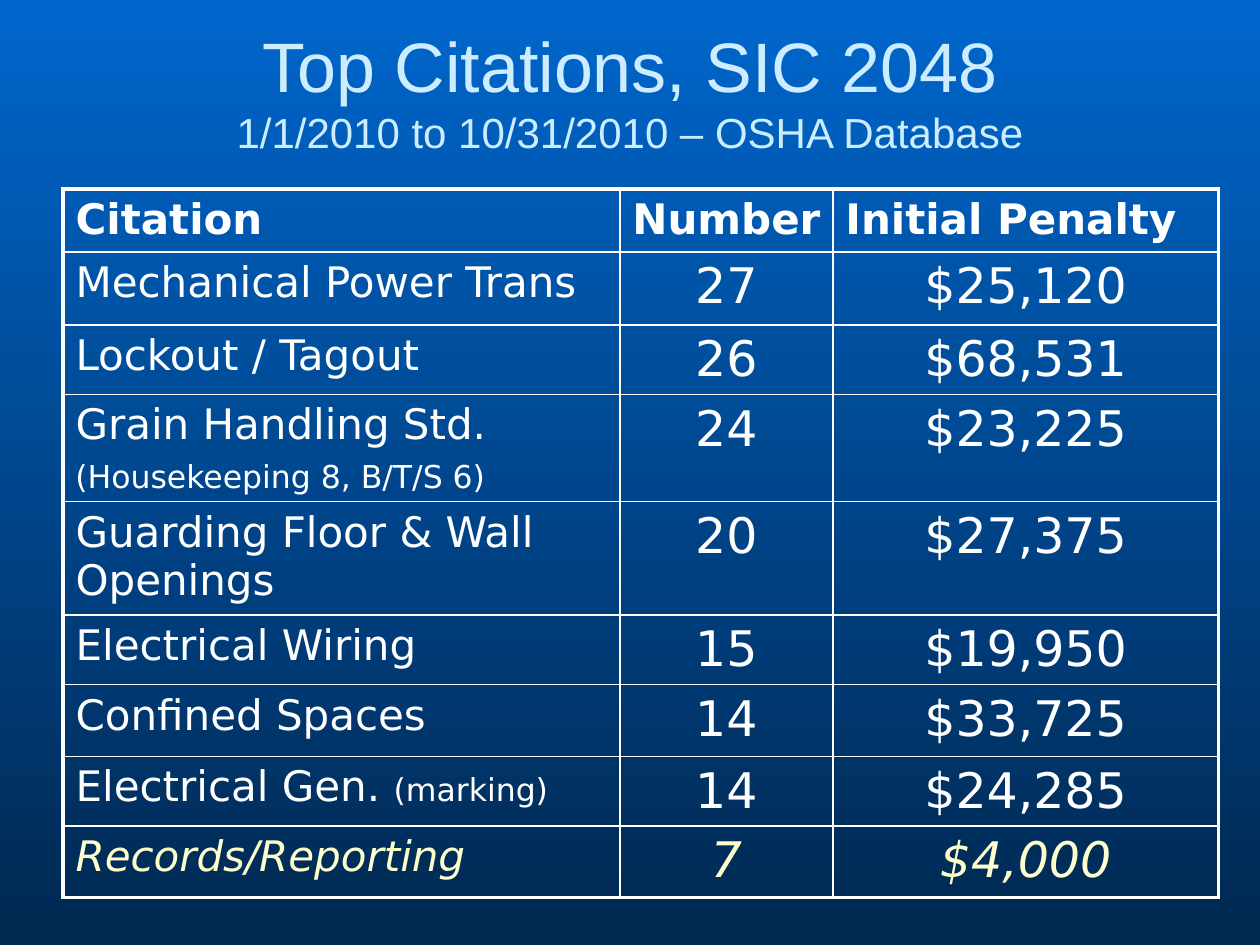
from lxml.etree import SubElement
from pptx import Presentation
from pptx.dml.color import RGBColor
from pptx.enum.text import MSO_ANCHOR, MSO_AUTO_SIZE, PP_ALIGN
from pptx.oxml.ns import qn
from pptx.util import Inches, Pt

WHITE = RGBColor(0xFF, 0xFF, 0xFF)
CREAM = RGBColor(0xFF, 0xFF, 0xCC)
ICE = RGBColor(0xCC, 0xEC, 0xFF)
SKY = RGBColor(0x00, 0x66, 0xCC)
NAVY = RGBColor(0x00, 0x28, 0x50)
SANS = "DejaVu Sans"

TITLE = [("Top Citations, SIC 2048", 40), ("1/1/2010 to 10/31/2010 – OSHA Database", 24)]
HEAD = ("Citation", "Number", "Initial Penalty")
ROWS = [
    ("Mechanical Power Trans", "27", "$25,120"),
    ("Lockout / Tagout", "26", "$68,531"),
    ("Grain Handling Std.", "24", "$23,225"),
    ("Guarding Floor & Wall Openings", "20", "$27,375"),
    ("Electrical Wiring", "15", "$19,950"),
    ("Confined Spaces", "14", "$33,725"),
    ("Electrical Gen. ", "14", "$24,285"),
    ("Records/Reporting", "7", "$4,000"),
]
ASIDE = {"Electrical Gen. ": "(marking)"}
DETAIL = "(Housekeeping 8, B/T/S 6)"
COLS = (4.42, 1.69, 3.06)
HIGH = (0.5, 0.58, 0.55, 0.85, 0.9, 0.55, 0.57, 0.55, 0.57)


def put(item, values):
    for key, value in values.items():
        setattr(item, key, value)


def write(para, text, size, color=WHITE, name=SANS, **style):
    run = para.add_run()
    run.text = text
    put(run.font, dict(size=Pt(size), name=name, **style))
    run.font.color.rgb = color


def place(shape, left, top, width, height):
    put(shape, dict(left=Inches(left), top=Inches(top),
                    width=Inches(width), height=Inches(height)))


def border(cell, outer):
    props = cell._tc.get_or_add_tcPr()
    for side in "LRTB":
        width = Pt(2.25 if side in outer else 1)
        line = SubElement(props, qn("a:ln" + side), w=str(width))
        fill = SubElement(line, qn("a:solidFill"))
        SubElement(fill, qn("a:srgbClr"), val=str(WHITE))
    cell.fill.background()


def add_title(slide):
    title = slide.shapes.title
    place(title, 0.5, 0, 9, 1.42)
    put(title.text_frame, dict(vertical_anchor=MSO_ANCHOR.MIDDLE,
                               auto_size=MSO_AUTO_SIZE.NONE, word_wrap=True))
    para = title.text_frame.paragraphs[0]
    para.alignment = PP_ALIGN.CENTER
    for i, (text, size) in enumerate(TITLE):
        if i:
            para.add_line_break()
        write(para, text, size, ICE, "Arial")


def add_grid(slide):
    data = [HEAD] + ROWS
    last = len(data) - 1
    grid = slide.shapes.add_table(
        len(data), len(COLS), Inches(0.5), Inches(1.5),
        Inches(sum(COLS)), Inches(sum(HIGH))).table
    put(grid, dict(first_row=False, horz_banding=False))
    for col, width in zip(grid.columns, COLS):
        col.width = Inches(width)
    for row, height in zip(grid.rows, HIGH):
        row.height = Inches(height)
    for r, row in enumerate(data):
        for c, text in enumerate(row):
            cell = grid.cell(r, c)
            cell.margin_right = Inches(0.1 if r else 0.04)
            size = 28 if r and c else 24
            para = cell.text_frame.paragraphs[0]
            put(para, dict(space_before=Pt(size * 0.2),
                           alignment=PP_ALIGN.CENTER if r and c else PP_ALIGN.LEFT))
            write(para, text, size, CREAM if r == last else WHITE,
                  bold=r == 0, italic=r == last)
            if text in ASIDE:
                write(para, ASIDE[text], 18)
            edges = {"L": c == 0, "R": c == len(COLS) - 1, "T": r == 0, "B": r == last}
            border(cell, [side for side, on in edges.items() if on])


def main():
    deck = Presentation()
    put(deck, dict(slide_width=Inches(10), slide_height=Inches(7.5)))
    slide = deck.slides.add_slide(deck.slide_layouts[5])
    fill = slide.background.fill
    fill.gradient()
    fill.gradient_angle = 270
    for stop, color, at in zip(fill.gradient_stops, (SKY, NAVY), (0, 1)):
        stop.color.rgb = color
        stop.position = at
    add_title(slide)
    add_grid(slide)
    note = slide.shapes.add_textbox(Inches(0.5), Inches(3.58), Inches(4.88), Inches(0.4))
    note.text_frame.word_wrap = True
    write(note.text_frame.paragraphs[0], DETAIL, 18)
    deck.save("out.pptx")


if __name__ == "__main__":
    main()
